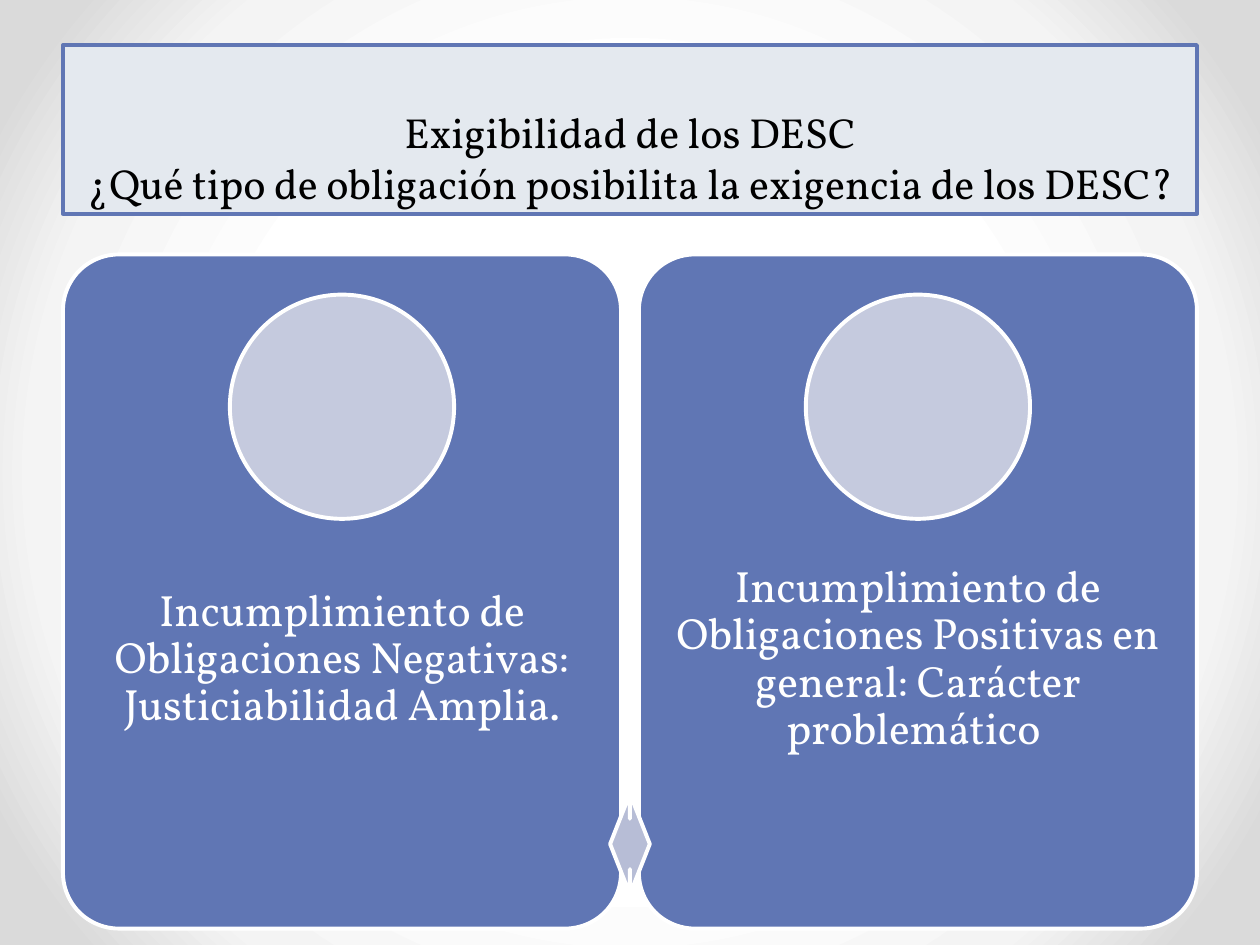
from pptx import Presentation
from pptx.dml.color import RGBColor
from pptx.enum.shapes import MSO_SHAPE
from pptx.enum.text import MSO_ANCHOR, MSO_AUTO_SIZE, PP_ALIGN
from pptx.oxml import parse_xml
from pptx.oxml.ns import nsdecls, qn
from pptx.util import Cm, Pt

BLUE = RGBColor(0x60, 0x76, 0xB4)
PALE = RGBColor(0xE4, 0xE9, 0xEF)
LILAC = RGBColor(0xC5, 0xCA, 0xDE)
ARROW = RGBColor(0xB7, 0xBD, 0xD6)
WHITE = RGBColor(0xFF, 0xFF, 0xFF)
BLACK = RGBColor(0, 0, 0)
GREY = RGBColor(0xF4, 0xF4, 0xF4)
EDGE = RGBColor(0xDA, 0xDA, 0xDA)

FONT = "Vollkorn"
MARGIN = 1.27
CONTENT_WIDTH = 22.86
CARD_TOP = 5.13
CARD_WIDTH = 11.25
CARD_HEIGHT = 13.59
CIRCLE = 4.52

TITLE = (
    "Exigibilidad de los DESC",
    "¿Qué tipo de obligación posibilita la exigencia de los DESC?",
)
CARDS = (
    "Incumplimiento de Obligaciones Negativas: Justiciabilidad Amplia.",
    "Incumplimiento de Obligaciones Positivas en general: Carácter problemático ",
)


def paint_background(page):
    fill = page.background.fill
    fill.gradient()
    stops = "".join(
        f'<a:gs pos="{position * 1000}"><a:srgbClr val="{color}"/></a:gs>'
        for position, color in ((50, WHITE), (76, GREY), (92, EDGE))
    )
    gradient = parse_xml(
        f'<a:gradFill {nsdecls("a")} rotWithShape="1"><a:gsLst>{stops}</a:gsLst>'
        '<a:path path="circle"><a:fillToRect l="50000" t="50000" r="50000" b="50000"/>'
        "</a:path></a:gradFill>"
    )
    current = next(page.element.iter(qn("a:gradFill")))
    current.getparent().replace(current, gradient)


def paint(shape, fill, line):
    shape.fill.solid()
    shape.fill.fore_color.rgb = fill
    shape.line.color.rgb = line
    shape.line.width = Pt(2.25)


def place(shape, left, top, width, height):
    shape.left, shape.top = Cm(left), Cm(top)
    shape.width, shape.height = Cm(width), Cm(height)


def add_span(para, text, size, color):
    span = para.add_run()
    span.text = text
    span.font.name = FONT
    span.font.size = Pt(size)
    span.font.color.rgb = color


def add_figure(page, kind, left, top, width, height, fill):
    shape = page.shapes.add_shape(kind, Cm(left), Cm(top), Cm(width), Cm(height))
    shape.shadow.inherit = False
    paint(shape, fill, WHITE)
    return shape


def add_title(page):
    title = page.shapes.title
    place(title, MARGIN, 0.91, CONTENT_WIDTH, 3.4)
    paint(title, PALE, BLUE)
    frame = title.text_frame
    frame.word_wrap = True
    frame.auto_size = MSO_AUTO_SIZE.NONE
    frame.vertical_anchor = MSO_ANCHOR.BOTTOM
    para = frame.paragraphs[0]
    para.alignment = PP_ALIGN.CENTER
    heading, question = TITLE
    add_span(para, heading, 24, BLACK)
    para.add_line_break()
    add_span(para, question, 24, BLACK)


def add_caption(page, left, text):
    box = page.shapes.add_textbox(Cm(left), Cm(10.57), Cm(CARD_WIDTH), Cm(5.44))
    frame = box.text_frame
    frame.word_wrap = True
    frame.vertical_anchor = MSO_ANCHOR.MIDDLE
    frame.margin_left = frame.margin_right = Cm(0.48)
    frame.margin_top = frame.margin_bottom = Cm(0.48)
    para = frame.paragraphs[0]
    para.alignment = PP_ALIGN.CENTER
    para.line_spacing = 0.9
    add_span(para, text, 25, WHITE)


def add_card(page, left, text):
    card = add_figure(page, MSO_SHAPE.ROUNDED_RECTANGLE, left, CARD_TOP,
                      CARD_WIDTH, CARD_HEIGHT, BLUE)
    card.adjustments[0] = 0.1
    add_caption(page, left, text)
    add_figure(page, MSO_SHAPE.OVAL, left + (CARD_WIDTH - CIRCLE) / 2, 5.94,
               CIRCLE, CIRCLE, LILAC)


def main():
    deck = Presentation()
    deck.slide_width, deck.slide_height = Cm(25.4), Cm(19.05)
    page = deck.slides.add_slide(deck.slide_layouts[5])
    paint_background(page)
    add_title(page)
    for index, text in enumerate(CARDS):
        add_card(page, MARGIN + index * (CONTENT_WIDTH - CARD_WIDTH), text)
    add_figure(page, MSO_SHAPE.LEFT_RIGHT_ARROW, 12.3, 16, 0.8, 2.03, ARROW)
    deck.save("out.pptx")


if __name__ == "__main__":
    main()
